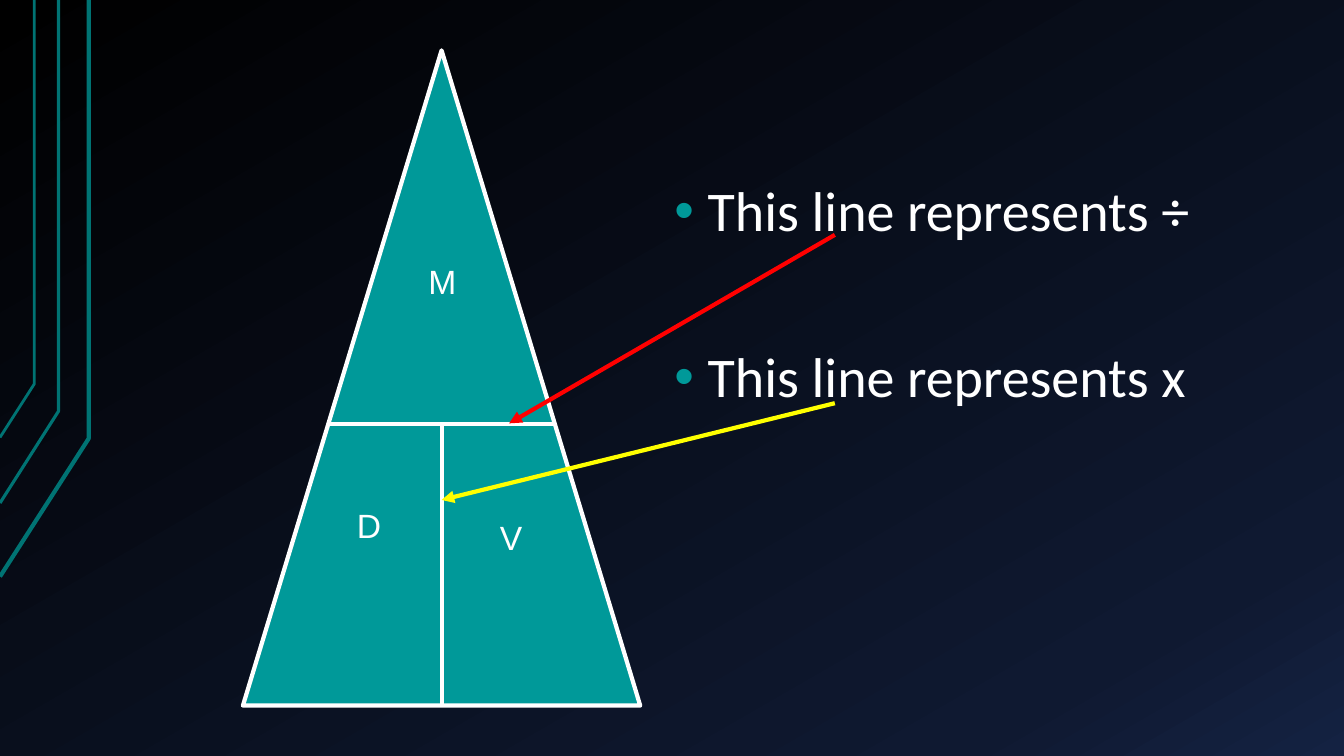
from copy import deepcopy
from pptx import Presentation, util as u
from pptx.dml import color
from pptx.enum import shapes, text
from pptx.oxml import ns, xmlchemy

TEAL, DARK_TEAL, WHITE = "009999", "007373", "FFFFFF"
BACKGROUND = [(0, "000000"), (0.85, "0F1931"), (1, "142242")]
CIRCUIT_TRACES = [
    ([(0, 5.72), (0.88, 4.35), (0.88, 0)], 3),
    ([(0, 4.99), (0.58, 4.08), (0.58, 0)], 2.25),
    ([(0, 4.34), (0.34, 3.81), (0.34, 0)], 2),
]
RULES = ["This line represents ÷", "This line represents x"]
LETTERS = [("D", 3.44, 4.96), ("M", 4.15, 2.54), ("V", 4.86, 5.08)]
TRIANGLE = (2.41, 0.5, 3.94, 6.5)
DIVIDER_Y = 4.21
POINTERS = [
    ((8.28, 2.33), (5.05, 4.2), "FF0000"),
    ((8.28, 4), (4.38, 4.96), "FFFF00"),
]


def rgb(value):
    return color.RGBColor.from_string(value)


def add_xml(parent, tag, **attributes):
    child = xmlchemy.OxmlElement(tag)
    for key, value in attributes.items():
        child.set(key, value)
    parent.append(child)
    return child


def style_line(line, value, width):
    line.color.rgb = rgb(value)
    line.width = u.Pt(width)


def write(paragraph, words, *, font, size, value=WHITE):
    run = paragraph.add_run()
    run.text = words
    run.font.name = font
    run.font.size = u.Pt(size)
    run.font.color.rgb = rgb(value)


def add_box(slide, *place):
    frame = slide.shapes.add_textbox(*map(u.Inches, place)).text_frame
    frame.word_wrap = True
    return frame


def add_bullet(paragraph, value):
    properties = paragraph._p.get_or_add_pPr()
    properties.set("marL", str(u.Inches(0.33)))
    properties.set("indent", str(u.Inches(-0.33)))
    add_xml(add_xml(properties, "a:buClr"), "a:srgbClr", val=value)
    add_xml(properties, "a:buFont", typeface="Arial")
    add_xml(properties, "a:buChar", char="•")


def add_line(slide, start, end, value, arrow=False):
    connector = slide.shapes.add_connector(
        shapes.MSO_CONNECTOR.STRAIGHT, *map(u.Inches, start + end))
    style_line(connector.line, value, 3)
    if arrow:
        add_xml(connector.line._get_or_add_ln(), "a:tailEnd", type="triangle")
    add_xml(connector._element.spPr, "a:effectLst")


def paint_background(slide):
    fill = slide.background.fill
    fill.gradient()
    fill.gradient_angle = 300
    stops = slide._element.find(".//" + ns.qn("a:gsLst"))
    stops.append(deepcopy(stops[-1]))
    for stop, (position, value) in zip(fill.gradient_stops, BACKGROUND):
        stop.position = position
        stop.color.rgb = rgb(value)


def add_traces(slide):
    for points, width in CIRCUIT_TRACES:
        corners = [(u.Inches(x), u.Inches(y)) for x, y in points]
        builder = slide.shapes.build_freeform(*corners[0])
        builder.add_line_segments(corners[1:], close=False)
        trace = builder.convert_to_shape()
        trace.fill.background()
        trace.shadow.inherit = False
        style_line(trace.line, DARK_TEAL, width)


def add_rules(slide):
    frame = add_box(slide, 6.59, 1.77, 5.38, 4.81)
    for index, rule in enumerate(RULES):
        paragraph = frame.add_paragraph() if index else frame.paragraphs[0]
        paragraph.line_spacing = 0.9
        paragraph.space_before = u.Pt(75 * index)
        add_bullet(paragraph, TEAL)
        write(paragraph, rule, font="Calibri", size=40)


def add_formula_triangle(slide):
    left, top, width, height = TRIANGLE
    triangle = slide.shapes.add_shape(
        shapes.MSO_SHAPE.ISOSCELES_TRIANGLE, *map(u.Inches, TRIANGLE))
    triangle.shadow.inherit = False
    triangle.fill.solid()
    triangle.fill.fore_color.rgb = rgb(TEAL)
    style_line(triangle.line, WHITE, 3)
    center, bottom = left + width / 2, top + height
    half = width / 2 * (DIVIDER_Y - top) / height
    add_line(slide, (center - half, DIVIDER_Y), (center + half, DIVIDER_Y), WHITE)
    add_line(slide, (center, DIVIDER_Y), (center, bottom), WHITE)
    for letter, x, y in LETTERS:
        frame = add_box(slide, x, y, 0.71, 1.18)
        frame.vertical_anchor = text.MSO_ANCHOR.TOP
        write(frame.paragraphs[0], letter, font="Arial", size=24)


def main():
    deck = Presentation()
    deck.slide_width, deck.slide_height = u.Inches(13.33), u.Inches(7.5)
    slide = deck.slides.add_slide(deck.slide_layouts[6])
    paint_background(slide)
    add_traces(slide)
    add_rules(slide)
    add_formula_triangle(slide)
    for start, end, value in POINTERS:
        add_line(slide, start, end, value, arrow=True)
    deck.save("out.pptx")


if __name__ == "__main__":
    main()
